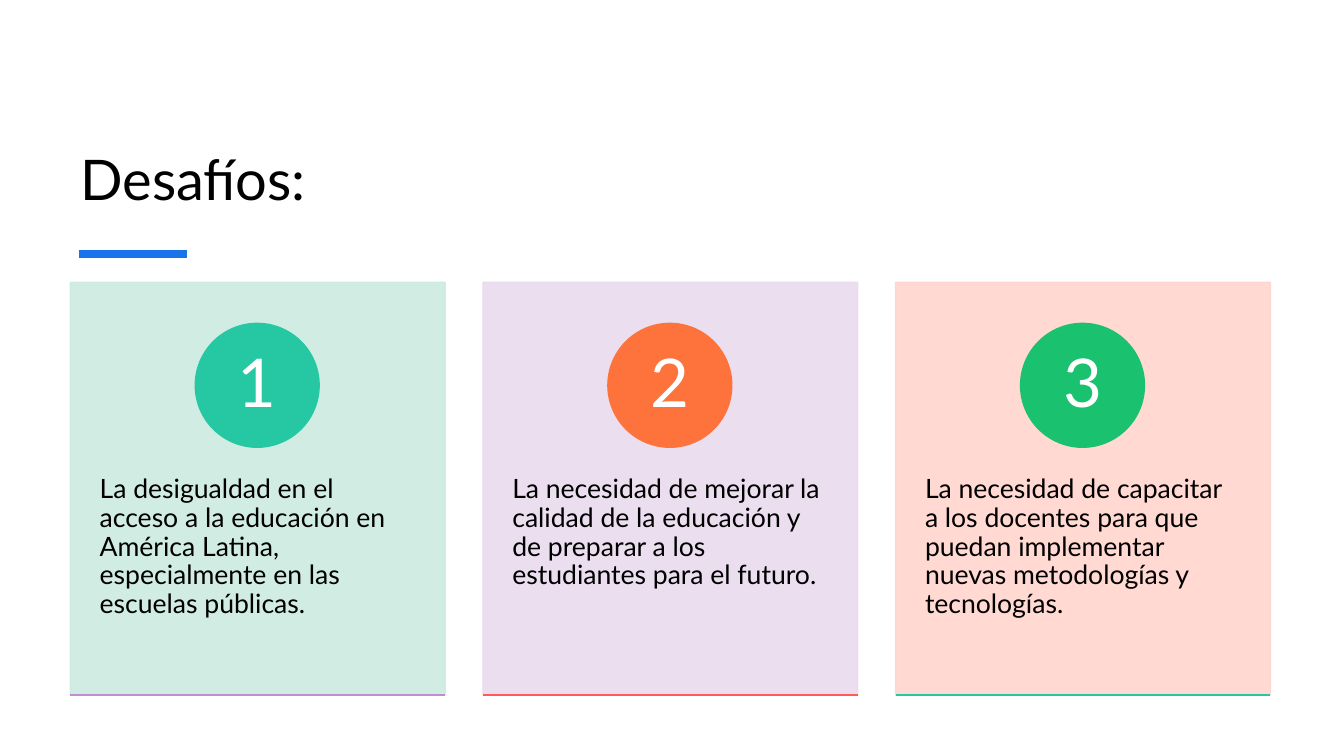
from dataclasses import dataclass

from lxml.etree import SubElement
from pptx import Presentation
from pptx.dml.color import RGBColor
from pptx.enum.shapes import MSO_CONNECTOR as Connector, MSO_SHAPE as Shape
from pptx.enum.text import MSO_ANCHOR as Anchor, PP_ALIGN as Align
from pptx.oxml.ns import qn
from pptx.util import Emu, Pt


@dataclass(frozen=True)
class Theme:
    font: str = "Lato"
    ink: str = "000000"
    white: str = "FFFFFF"
    accent: str = "1973EB"
    title_size: int = 40
    number_size: int = 48
    body_size: int = 19
    card_opacity: int = 90


THEME = Theme()
EMU_PER_PX = 9525
CARD_LEFT, CARD_TOP, CARD_WIDTH, CARD_HEIGHT = 67, 269, 357, 393
CARD_PITCH = 393
BADGE_SIZE = 118

CHALLENGES = [
    ("La desigualdad en el acceso a la educación en América Latina, "
     "especialmente en las escuelas públicas.", "CDEBE0", "25C8A2", "BF8ED1"),
    ("La necesidad de mejorar la calidad de la educación y de preparar "
     "a los estudiantes para el futuro.", "E8DBEE", "FE733C", "FE5A5A"),
    ("La necesidad de capacitar a los docentes para que puedan implementar "
     "nuevas metodologías y tecnologías.", "FFD5CE", "1AC16E", "25C8A2"),
]


def px(*lengths):
    return [Emu(length * EMU_PER_PX) for length in lengths]


def write(frame, text, size, color, align, anchor, spacing=1.0):
    frame.text = text
    frame.word_wrap = True
    frame.vertical_anchor = anchor
    paragraph = frame.paragraphs[0]
    paragraph.alignment = align
    paragraph.line_spacing = spacing
    font = paragraph.runs[0].font
    font.name = THEME.font
    font.size = Pt(size)
    font.color.rgb = RGBColor.from_string(color)


def set_insets(frame, horizontal, vertical):
    frame.margin_left, frame.margin_right = px(horizontal, horizontal)
    frame.margin_top, frame.margin_bottom = px(vertical, vertical)


def add_panel(slide, preset, box, color, opacity=100):
    panel = slide.shapes.add_shape(preset, *px(*box))
    panel.shadow.inherit = False
    panel.fill.solid()
    panel.line.width = Pt(1)
    for paint in (panel.fill.fore_color, panel.line.color):
        paint.rgb = RGBColor.from_string(color)
    if opacity < 100:
        for swatch in panel.element.spPr.iter(qn("a:srgbClr")):
            SubElement(swatch, qn("a:alpha"), val=str(opacity * 1000))
    return panel


def add_rule(slide, left, top, width, color, weight):
    rule = slide.shapes.add_connector(
        Connector.STRAIGHT, *px(left, top, left + width, top))
    rule.line.color.rgb = RGBColor.from_string(color)
    rule.line.width = Pt(weight)
    SubElement(rule.element.spPr, qn("a:effectLst"))


def add_title(slide, text):
    title = slide.shapes.title
    title.left, title.top, title.width, title.height = px(67, 60, 1143, 146)
    write(title.text_frame, text, THEME.title_size, THEME.ink,
          Align.LEFT, Anchor.BOTTOM)


def add_challenge(slide, index, text, tint, badge_color, base_color):
    left = CARD_LEFT + index * CARD_PITCH
    add_panel(slide, Shape.RECTANGLE, (left, CARD_TOP, CARD_WIDTH, CARD_HEIGHT),
              tint, THEME.card_opacity)

    description = slide.shapes.add_textbox(*px(left, 418, CARD_WIDTH, 235))
    set_insets(description.text_frame, 28, 35)
    write(description.text_frame, text, THEME.body_size, THEME.ink,
          Align.LEFT, Anchor.TOP, 0.9)

    badge_left = left + (CARD_WIDTH - BADGE_SIZE) // 2
    badge = add_panel(slide, Shape.OVAL,
                      (badge_left, 308, BADGE_SIZE, BADGE_SIZE), badge_color)
    set_insets(badge.text_frame, 10, 1)
    write(badge.text_frame, str(index + 1), THEME.number_size, THEME.white,
          Align.CENTER, Anchor.MIDDLE, 0.9)

    add_rule(slide, left, CARD_TOP + CARD_HEIGHT, CARD_WIDTH, base_color, 1)


def main():
    deck = Presentation()
    deck.slide_width, deck.slide_height = px(1280, 720)
    slide = deck.slides.add_slide(deck.slide_layouts[5])
    add_title(slide, "Desafíos:")
    add_rule(slide, 75, 242, 103, THEME.accent, 6)
    for index, challenge in enumerate(CHALLENGES):
        add_challenge(slide, index, *challenge)
    deck.save("out.pptx")


if __name__ == "__main__":
    main()
